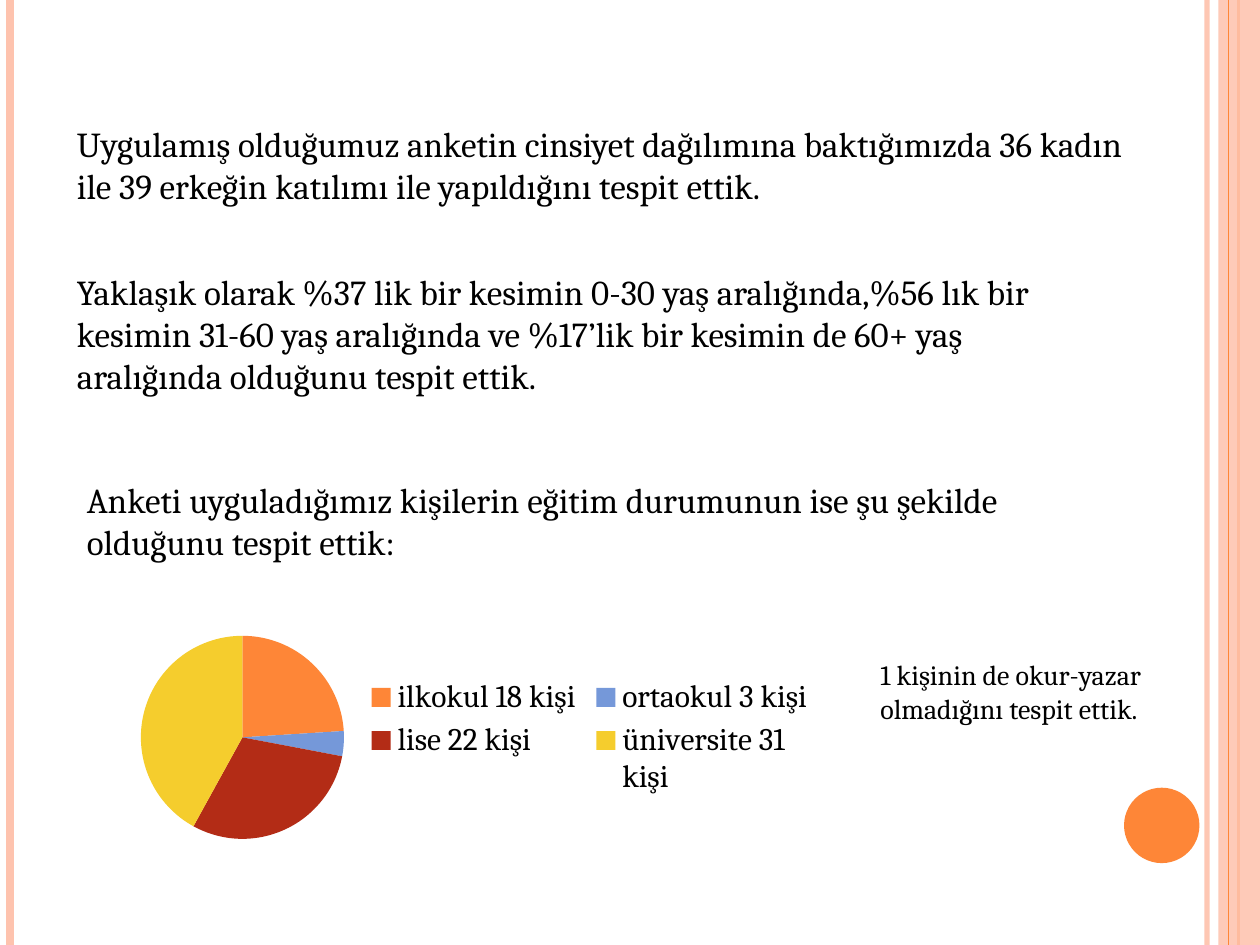
from dataclasses import dataclass

from lxml import etree
from pptx import Presentation
from pptx import util as u
from pptx.chart import data
from pptx.dml.color import RGBColor
from pptx.enum import chart, shapes, text
from pptx.oxml import ns


@dataclass(frozen=True)
class Theme:
    font: str = "Cambria"
    ink: str = "000000"
    peach: str = "FEC3AE"
    orange: str = "FE8637"
    slices: tuple = ("FE8637", "7598D9", "B32C16", "F5CD2D")
    body: int = 20
    legend: int = 18
    note: int = 16


T = Theme()


def add_text(s, words, left, top, width, height, size=T.body, color=T.ink):
    box = s.shapes.add_textbox(u.Cm(left), u.Cm(top), u.Cm(width), u.Cm(height))
    tf = box.text_frame
    tf.word_wrap = True
    tf.auto_size = text.MSO_AUTO_SIZE.SHAPE_TO_FIT_TEXT
    r = tf.paragraphs[0].add_run()
    r.text = words
    r.font.name = T.font
    r.font.size = u.Pt(size)
    r.font.color.rgb = RGBColor.from_string(color)


def paint(fill, color, alpha=100):
    fill.solid()
    fill.fore_color.rgb = RGBColor.from_string(color)
    if alpha < 100:
        clr = fill._xPr.find(".//" + ns.qn("a:srgbClr"))
        etree.SubElement(clr, ns.qn("a:alpha"), val=str(alpha * 1000))


prs = Presentation()
prs.slide_width, prs.slide_height = u.Cm(25.4), u.Cm(19.05)
s = prs.slides.add_slide(prs.slide_layouts[6])

band = s.shapes.add_shape(
    shapes.MSO_SHAPE.RECTANGLE, u.Cm(24.56), 0, u.Cm(0.84), prs.slide_height)
dot = s.shapes.add_shape(
    shapes.MSO_SHAPE.OVAL, u.Cm(22.66), u.Cm(15.88), u.Cm(1.52), u.Cm(1.52))
for sp, color, alpha in [(band, T.peach, 87), (dot, T.orange, 100)]:
    sp.shadow.inherit = False
    sp.line.fill.background()
    paint(sp.fill, color, alpha)

for x, color, width, alpha in [
    (24.33, T.peach, 3, 93),
    (0.2, T.peach, 4.5, 100),
    (24.97, T.orange, 1.5, 100),
    (24.77, T.orange, 0.75, 100),
]:
    rule = s.shapes.add_connector(
        shapes.MSO_CONNECTOR.STRAIGHT, u.Cm(x), 0, u.Cm(x), prs.slide_height)
    rule.line.width = u.Pt(width)
    paint(rule.line.fill, color, alpha)
    etree.SubElement(rule._element.spPr, ns.qn("a:effectLst"))
    if x == 24.97:
        band._element.addprevious(rule._element)

add_text(s, "Uygulamış olduğumuz anketin cinsiyet dağılımına baktığımızda 36 kadın "
            "ile 39 erkeğin katılımı ile yapıldığını tespit ettik.",
         1.3, 2.34, 22.4, 1.96)
add_text(s, "Yaklaşık olarak %37 lik bir kesimin 0-30 yaş aralığında,%56 lık bir "
            "kesimin 31-60 yaş aralığında ve %17’lik bir kesimin de 60+ yaş "
            "aralığında olduğunu tespit ettik.",
         1.3, 5.33, 21.21, 2.82)
add_text(s, "Anketi uyguladığımız kişilerin eğitim durumunun ise şu şekilde "
            "olduğunu tespit ettik:",
         1.5, 9.53, 21.21, 1.96)

cd = data.CategoryChartData()
cd.categories = ["ilkokul 18 kişi", "ortaokul 3 kişi", "lise 22 kişi", "üniversite 31 kişi"]
cd.add_series("Series 1", (24, 4, 30, 42))
pie = s.shapes.add_chart(
    chart.XL_CHART_TYPE.PIE, u.Cm(2.49), u.Cm(12.12), u.Cm(14.2), u.Cm(5.49), cd).chart
pie.has_title = False
pie.has_legend = True
pie.legend.position = chart.XL_LEGEND_POSITION.RIGHT
pie.legend.include_in_layout = False
pie.font.name = T.font
pie.font.size = u.Pt(T.legend)
pie.font.color.rgb = RGBColor.from_string(T.ink)
pie.plots[0].vary_by_categories = True
for i, color in enumerate(T.slices):
    paint(pie.plots[0].series[0].points[i].format.fill, color)

add_text(s, "1 kişinin de okur-yazar olmadığını tespit ettik.",
         17.5, 13.13, 6.81, 1.63, size=T.note)

prs.save("out.pptx")
